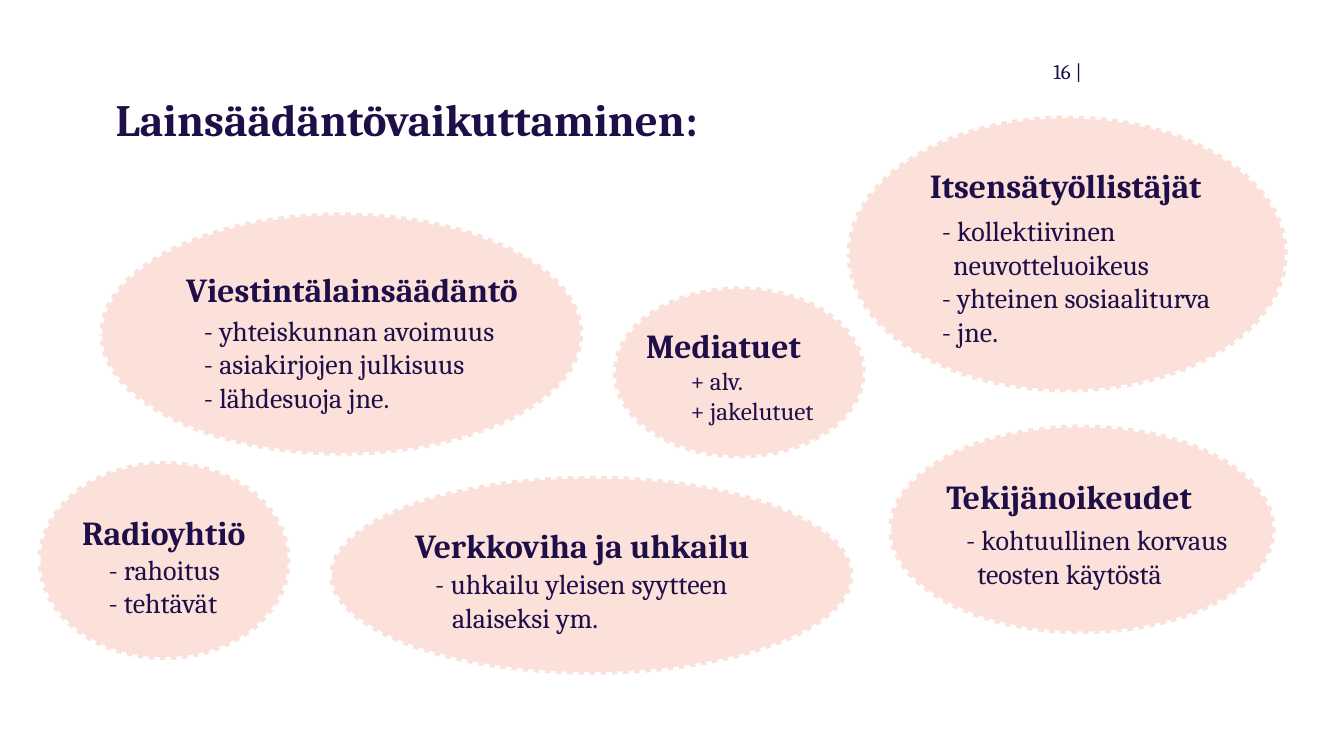
from pptx import Presentation
from pptx.dml.color import RGBColor
from pptx.enum.dml import MSO_LINE
from pptx.enum.shapes import MSO_SHAPE
from pptx.enum.text import MSO_ANCHOR, MSO_AUTO_SIZE, PP_ALIGN
from pptx.util import Pt

NAVY = RGBColor(0x1E, 0x0F, 0x49)
BLUSH = RGBColor(0xFC, 0xE0, 0xDA)
WHITE = RGBColor(0xFF, 0xFF, 0xFF)
HEADING_HEIGHT = 28.8


def write(frame, lines, size=15, bold=False, align=PP_ALIGN.LEFT,
          spacing=None, hang=0):
    """Write one paragraph per line; \\v breaks a line, hang indents what follows."""
    for index, line in enumerate(lines):
        paragraph = frame.paragraphs[0] if index == 0 else frame.add_paragraph()
        paragraph.text = line
        paragraph.alignment = align
        if spacing:
            paragraph.line_spacing = spacing
        if hang:
            properties = paragraph._p.get_or_add_pPr()
            properties.set("marL", str(Pt(hang)))
            properties.set("indent", str(-Pt(hang)))
        for run in paragraph.runs:
            run.font.name = "Cambria"
            run.font.size = Pt(size)
            run.font.bold = bold
            run.font.color.rgb = NAVY


class TopicSlide:
    def __init__(self, slide):
        self.slide = slide

    def text(self, place, lines, **style):
        frame = self.slide.shapes.add_textbox(*map(Pt, place)).text_frame
        frame.word_wrap = True
        frame.auto_size = MSO_AUTO_SIZE.SHAPE_TO_FIT_TEXT
        write(frame, lines, **style)
        return frame

    def banner(self, place, line, **style):
        frame = self.text(place, [line], **style)
        frame.auto_size = MSO_AUTO_SIZE.NONE
        frame.vertical_anchor = MSO_ANCHOR.MIDDLE
        frame.margin_left = frame.margin_right = Pt(5)
        frame.margin_top = frame.margin_bottom = Pt(2.7)

    def ellipse(self, place):
        oval = self.slide.shapes.add_shape(MSO_SHAPE.OVAL, *map(Pt, place))
        oval.shadow.inherit = False
        oval.fill.solid()
        oval.fill.fore_color.rgb = BLUSH
        oval.line.color.rgb = WHITE
        oval.line.width = Pt(3)
        oval.line.dash_style = MSO_LINE.ROUND_DOT

    def topic(self, oval, heading, heading_place, points, points_place,
              align=PP_ALIGN.CENTER, **style):
        self.ellipse(oval)
        left, top, width = heading_place
        self.text((left, top, width, HEADING_HEIGHT), [heading],
                  size=18, bold=True, align=align)
        self.text(points_place, points, **style)


def main():
    deck = Presentation()
    deck.slide_width, deck.slide_height = Pt(720), Pt(405)
    page = TopicSlide(deck.slides.add_slide(deck.slide_layouts[6]))

    # Page number and title
    page.banner((422.6, 27.4, 162, 21.6), "16 |", size=11.2, align=PP_ALIGN.RIGHT)
    page.banner((56.9, 48.2, 488.2, 34.6), "Lainsäädäntövaikuttaminen:",
                size=24, bold=True, spacing=0.9)

    # Topics: ellipse, heading and points
    page.topic((453.6, 61.9, 236.2, 148.3),
               "Itsensätyöllistäjät", (475.9, 85, 190.1),
               ["- kollektiivinen\vneuvotteluoikeus",
                "- yhteinen sosiaaliturva", "- jne."],
               (497.5, 110.9, 174.2, 79.9), hang=6)
    page.topic((176.4, 254.9, 280.8, 106.6),
               "Verkkoviha ja uhkailu", (215.3, 277.9, 245.5),
               ["- uhkailu yleisen syytteen\valaiseksi ym."],
               (226.1, 300.2, 223.2, 61.9), align=PP_ALIGN.LEFT, hang=9)
    page.topic((20.2, 247, 135.4, 106.6),
               "Radioyhtiö", (29.5, 270.7, 116.6),
               ["- rahoitus", "- tehtävät"], (51.1, 292.3, 79.2, 43.9))
    page.topic((53.3, 113.8, 259.2, 130.3),
               "Viestintälainsäädäntö", (73.4, 140.4, 230.4),
               ["- yhteiskunnan avoimuus", "- asiakirjojen julkisuus",
                "- lähdesuoja jne."], (102.2, 164.2, 182.2, 61.9))
    page.topic((475.9, 227.5, 207.4, 112.3),
               "Tekijänoikeudet", (475.9, 251.3, 193.7),
               ["- kohtuullinen korvaus\vteosten käytöstä"],
               (510.5, 276.5, 187.2, 43.9), hang=6)
    page.topic((328.3, 153.4, 135.4, 92.2),
               "Mediatuet", (327.1, 170.6, 121),
               ["+ alv.", "+ jakelutuet"], (362.9, 192.2, 115.9, 40.3), size=13.5)

    deck.save("out.pptx")


if __name__ == "__main__":
    main()
